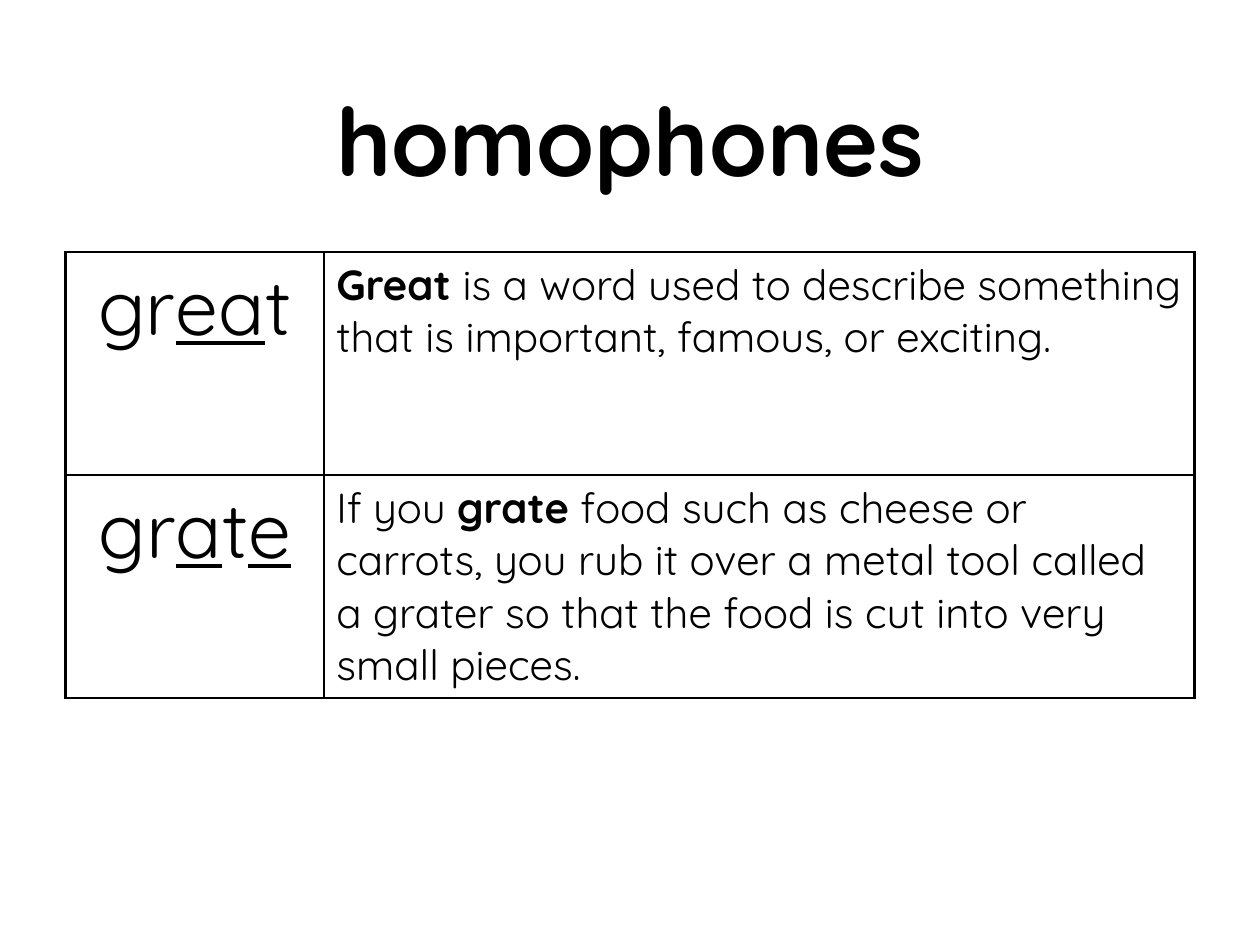
from dataclasses import dataclass

import pptx
import pptx.dml.color
import pptx.enum.text
import pptx.oxml
import pptx.oxml.ns
import pptx.util

WIDTH, HEIGHT = 10, 7.5
FONT = "Quicksand"
COLOURS = {"ink": "000000", "paper": "FFFFFF"}
COLUMN_WIDTHS = (2.05, 6.91)
ROW_HEIGHTS = (1.77, 1.73)
TABLE_TOP = 2
OUTER_LINE, INNER_LINE = 1.5, 1
ALIGN = pptx.enum.text.PP_ALIGN


@dataclass
class Piece:
    text: str
    bold: bool = False
    underline: bool = False


@dataclass
class Homophone:
    spelling: list[Piece]
    meaning: list[Piece]


HOMOPHONES = [
    Homophone(
        [Piece("gr"), Piece("ea", underline=True), Piece("t")],
        [Piece("Great ", bold=True),
         Piece("is a word used to describe something that is important, "
               "famous, or exciting.")],
    ),
    Homophone(
        [Piece("gr"), Piece("a", underline=True), Piece("t"),
         Piece("e", underline=True)],
        [Piece("If you "), Piece("grate", bold=True),
         Piece(" food such as cheese or carrots, you rub it over a metal tool "
               "called a grater so that the food is cut into very small pieces.")],
    ),
]


def colour(name: str) -> pptx.dml.color.RGBColor:
    return pptx.dml.color.RGBColor.from_string(COLOURS[name])


def write(paragraph, pieces: list[Piece], size: float, alignment) -> None:
    paragraph.alignment = alignment
    paragraph.font.name = FONT
    paragraph.font.size = pptx.util.Pt(size)
    paragraph.font.color.rgb = colour("ink")
    for piece in pieces:
        run = paragraph.add_run()
        run.text = piece.text
        run.font.bold = piece.bold
        run.font.underline = piece.underline


def set_borders(cell, widths: dict[str, float]) -> None:
    """Put border lines, in points, ahead of the fill as the schema asks."""
    properties = cell._tc.get_or_add_tcPr()
    for position, (side, width) in enumerate(widths.items()):
        properties.insert(position, pptx.oxml.parse_xml(
            f'<a:{side} {pptx.oxml.ns.nsdecls("a")} w="{pptx.util.Pt(width)}">'
            f'<a:solidFill><a:srgbClr val="{COLOURS["ink"]}"/></a:solidFill>'
            f'</a:{side}>'))


def add_title(slide, text: str) -> None:
    box = slide.shapes.add_textbox(0, pptx.util.Inches(0.7),
                                   pptx.util.Inches(WIDTH), pptx.util.Inches(1.45))
    box.text_frame.word_wrap = True
    paragraph = box.text_frame.paragraphs[0]
    paragraph.line_spacing = 0.9
    write(paragraph, [Piece(text, bold=True)], 54, ALIGN.CENTER)


def add_homophone_table(slide, homophones: list[Homophone]) -> None:
    table_width = sum(COLUMN_WIDTHS)
    frame = slide.shapes.add_table(
        len(homophones), len(COLUMN_WIDTHS),
        pptx.util.Inches((WIDTH - table_width) / 2), pptx.util.Inches(TABLE_TOP),
        pptx.util.Inches(table_width), pptx.util.Inches(sum(ROW_HEIGHTS)))
    table = frame.table
    table.first_row = table.horz_banding = False
    for column, width in zip(table.columns, COLUMN_WIDTHS):
        column.width = pptx.util.Inches(width)
    for row, height in zip(table.rows, ROW_HEIGHTS):
        row.height = pptx.util.Inches(height)

    for row, homophone in enumerate(homophones):
        contents = ((homophone.spelling, 44, ALIGN.CENTER),
                    (homophone.meaning, 24, ALIGN.LEFT))
        for column, (pieces, size, alignment) in enumerate(contents):
            cell = table.cell(row, column)
            cell.fill.solid()
            cell.fill.fore_color.rgb = colour("paper")
            write(cell.text_frame.paragraphs[0], pieces, size, alignment)
            set_borders(cell, {
                "lnL": OUTER_LINE if column == 0 else INNER_LINE,
                "lnR": OUTER_LINE if column == len(contents) - 1 else INNER_LINE,
                "lnT": OUTER_LINE if row == 0 else INNER_LINE,
                "lnB": INNER_LINE,
            })


def main() -> None:
    presentation = pptx.Presentation()
    presentation.slide_width = pptx.util.Inches(WIDTH)
    presentation.slide_height = pptx.util.Inches(HEIGHT)
    slide = presentation.slides.add_slide(presentation.slide_layouts[6])
    add_homophone_table(slide, HOMOPHONES)
    add_title(slide, "homophones")
    presentation.save("out.pptx")


if __name__ == "__main__":
    main()
